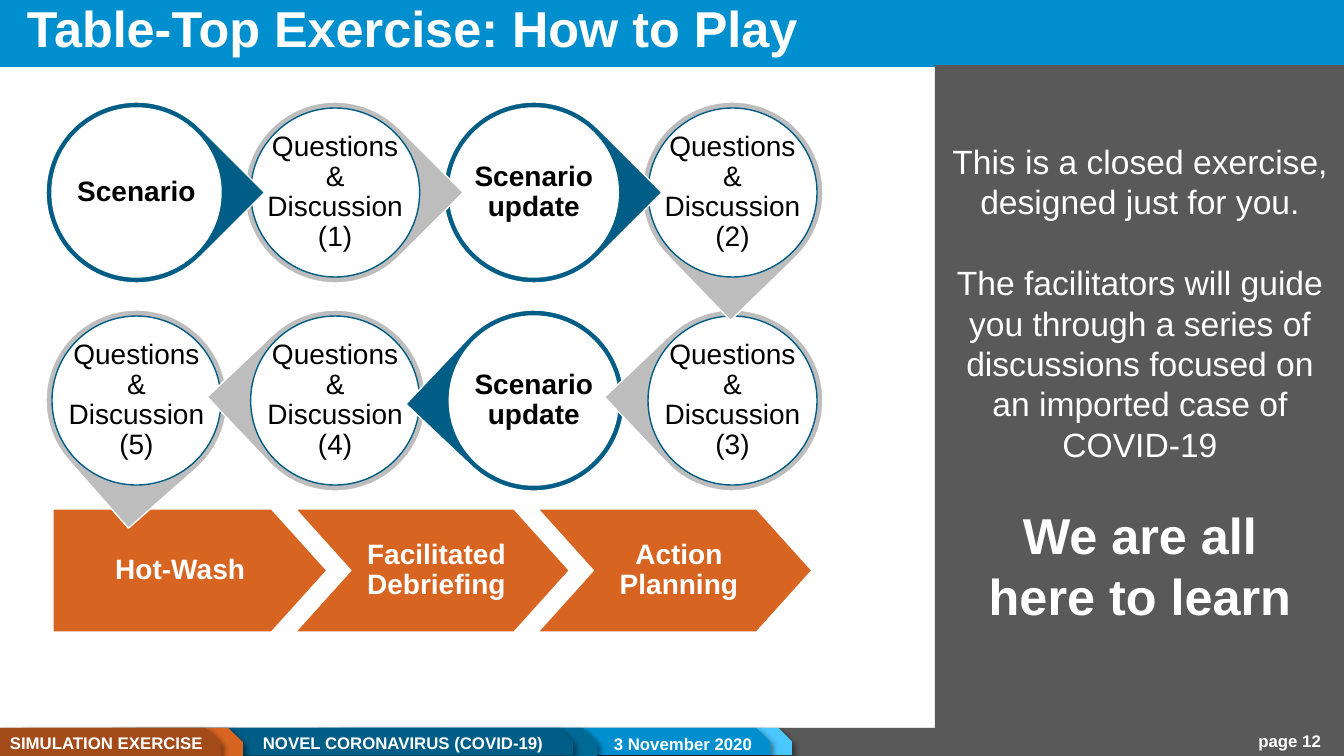
from dataclasses import dataclass

from lxml import etree
from pptx import Presentation
from pptx.dml.color import RGBColor
from pptx.enum.shapes import MSO_SHAPE
from pptx.enum.text import MSO_ANCHOR, MSO_AUTO_SIZE, PP_ALIGN
from pptx.oxml.ns import qn
from pptx.util import Emu, Pt

RECT = MSO_SHAPE.RECTANGLE
SNIP = MSO_SHAPE.SNIP_1_RECTANGLE
DROP = MSO_SHAPE.TEAR
OVAL = MSO_SHAPE.OVAL
PLATE = MSO_SHAPE.PENTAGON
ARROW = MSO_SHAPE.CHEVRON
LEFT, MID, RIGHT = PP_ALIGN.LEFT, PP_ALIGN.CENTER, PP_ALIGN.RIGHT
TOP, CENTER = MSO_ANCHOR.TOP, MSO_ANCHOR.MIDDLE
FIXED = MSO_AUTO_SIZE.NONE
SCALE = 914400 / 100.8


@dataclass(frozen=True)
class Theme:
    font: str = "Arial"
    white: str = "FFFFFF"
    black: str = "000000"
    sky: str = "008FCE"
    light: str = "49C7FF"
    teal: str = "006A97"
    navy: str = "005D85"
    orange: str = "D86422"
    rust: str = "A24B19"
    dark: str = "595959"
    gray: str = "BDBDBD"
    head: int = 36
    body: int = 24
    label: int = 20
    foot: int = 12


T = Theme()


def px(n):
    return Emu(round(n * SCALE))


def rgb(code):
    return RGBColor.from_string(code)


def shade(shape):
    fx = etree.SubElement(shape.element.spPr, qn("a:effectLst"))
    cast = etree.SubElement(fx, qn("a:outerShdw"), blurRad="50800",
                            dist="38100", dir="2700000", rotWithShape="0")
    tint = etree.SubElement(cast, qn("a:srgbClr"), val=T.black)
    etree.SubElement(tint, qn("a:alpha"), val="40000")


def draw(shapes, kind, box, fill, line=None, cast=False):
    shape = shapes.add_shape(kind, *map(px, box))
    shape.fill.solid()
    shape.fill.fore_color.rgb = rgb(fill)
    if line:
        shape.line.color.rgb = rgb(line)
        shape.line.width = Pt(1)
    else:
        shape.line.fill.background()
    if cast:
        shade(shape)
    else:
        shape.shadow.inherit = False
    return shape


def setup(shape, anchor, pad=None, wrap=True):
    frame = shape.text_frame
    frame.auto_size = FIXED
    frame.word_wrap = wrap
    frame.vertical_anchor = anchor
    if pad:
        (frame.margin_left, frame.margin_top,
         frame.margin_right, frame.margin_bottom) = map(px, pad)
    return frame


def write(para, lines, size, color, bold=True, align=LEFT, space=None):
    para.alignment = align
    if space:
        para.line_spacing = space
    for i, line in enumerate(lines):
        if i:
            para.add_line_break()
        run = para.add_run()
        run.text = line
        run.font.name = T.font
        run.font.size = Pt(size)
        run.font.bold = bold
        run.font.color.rgb = rgb(color)


def header(slide, box):
    x, y, w, h = box
    band = draw(slide.shapes, RECT, box, T.sky)
    title = slide.shapes.title
    title.element.addprevious(band.element)
    title.left, title.top, title.width, title.height = map(
        px, (x + 17, y - 1, w - 184, h - 3))
    frame = setup(title, CENTER, (10, 5, 10, 5))
    write(frame.paragraphs[0], ["Table-Top Exercise: How to Play"],
          T.head, T.white, space=0.9)


def footer(slide, box):
    x, y, w, h = box
    draw(slide.shapes, RECT, box, T.dark, cast=True)
    tabs = [(341, 451, 27, T.light), (319, 451, 27, T.sky),
            (136, 461, 28, T.teal), (112, 461, 27, T.navy),
            (22, 221, 29, T.orange), (0, 221, 29, T.rust)]
    for dx, wide, high, fill in tabs:
        tab = draw(slide.shapes, SNIP, (x + dx, y, wide, high), fill, cast=True)
        tab.adjustments[0] = 0.5
    notes = [(0, 0, 216, 30, "SIMULATION EXERCISE", LEFT, TOP),
             (253, 0, 423, 30, "NOVEL CORONAVIRUS (COVID-19)", LEFT, TOP),
             (604, -4, 415, 40, "3 November 2020", LEFT, CENTER),
             (1151, -2, 180, 30, "page 12", RIGHT, TOP)]
    for dx, dy, wide, high, text, align, anchor in notes:
        note = slide.shapes.add_textbox(*map(px, (x + dx, y + dy, wide, high)))
        frame = setup(note, anchor)
        write(frame.paragraphs[0], [text], T.foot, T.white, align=align)


def panel(slide, box):
    shape = draw(slide.shapes, RECT, box, T.dark)
    frame = setup(shape, TOP, (10, 76, 9, 5))
    rows = [("This is a closed exercise, designed just for you.", T.body, 0),
            ("The facilitators will guide you through a series of "
             "discussions focused on an imported case of", T.body, 29),
            ("COVID-19", T.body, 0),
            ("We are all", T.head, 29),
            ("here to learn", T.head, 0)]
    for i, (text, size, gap) in enumerate(rows):
        para = frame.add_paragraph() if i else frame.paragraphs[0]
        para.space_before = Pt(gap)
        write(para, [text], size, T.white, size == T.head, MID)


def node(slide, box, turn, lines):
    x, y, w, h = box
    main = lines[0].startswith("Scenario")
    group = slide.shapes.add_group_shape()
    drop = draw(group.shapes, DROP, box, T.navy if main else T.gray, T.white)
    drop.adjustments[0] = 1
    drop.rotation = turn
    disc = draw(group.shapes, OVAL, (x + 6, y + 6, w - 12, h - 12),
                T.white, T.white if main else T.navy)
    frame = setup(disc, CENTER, (0, 0, 0, 0), wrap=False)
    write(frame.paragraphs[0], lines, T.label, T.black, main, MID, 0.9)


def ask(n):
    return ["Questions", "&", "Discussion", f"({n})"]


def cycle(slide, box):
    x, y, w, h = box
    size = 181
    across, down = (w - size) / 3, h - size
    update = ["Scenario", "update"]
    steps = [(0, 1, 138.6, ask(5)), (1, 1, 226.6, ask(4)),
             (2, 1, 223.4, update), (3, 1, 226.5, ask(3)),
             (3, 0, 135.9, ask(2)), (2, 0, 45, update),
             (1, 0, 45, ask(1)), (0, 0, 45, ["Scenario"])]
    for col, row, turn, lines in steps:
        spot = (x + col * across, y + row * down, size, size)
        node(slide, spot, turn, lines)


def finish(slide, box):
    x, y, w, h = box
    wide = 274
    step = (w - wide) / 2
    names = ["Hot-Wash", "Facilitated Debriefing", "Action Planning"]
    for i, name in enumerate(names):
        kind = ARROW if i else PLATE
        shape = draw(slide.shapes, kind, (x + i * step, y, wide, h),
                     T.orange, T.white)
        shape.adjustments[0] = 0.45
        frame = setup(shape, CENTER, (8, 0, 0, 0))
        write(frame.paragraphs[0], [name], T.label, T.white,
              align=MID, space=0.9)


def main():
    deck = Presentation()
    deck.slide_width, deck.slide_height = px(1344), px(756)
    slide = deck.slides.add_slide(deck.slide_layouts[5])
    header(slide, (0, 0, 1344, 67))
    footer(slide, (0, 728, 1344, 28))
    panel(slide, (935, 65, 409, 667))
    finish(slide, (53, 509, 759, 123))
    cycle(slide, (46, 102, 777, 389))
    deck.save("out.pptx")


if __name__ == "__main__":
    main()
